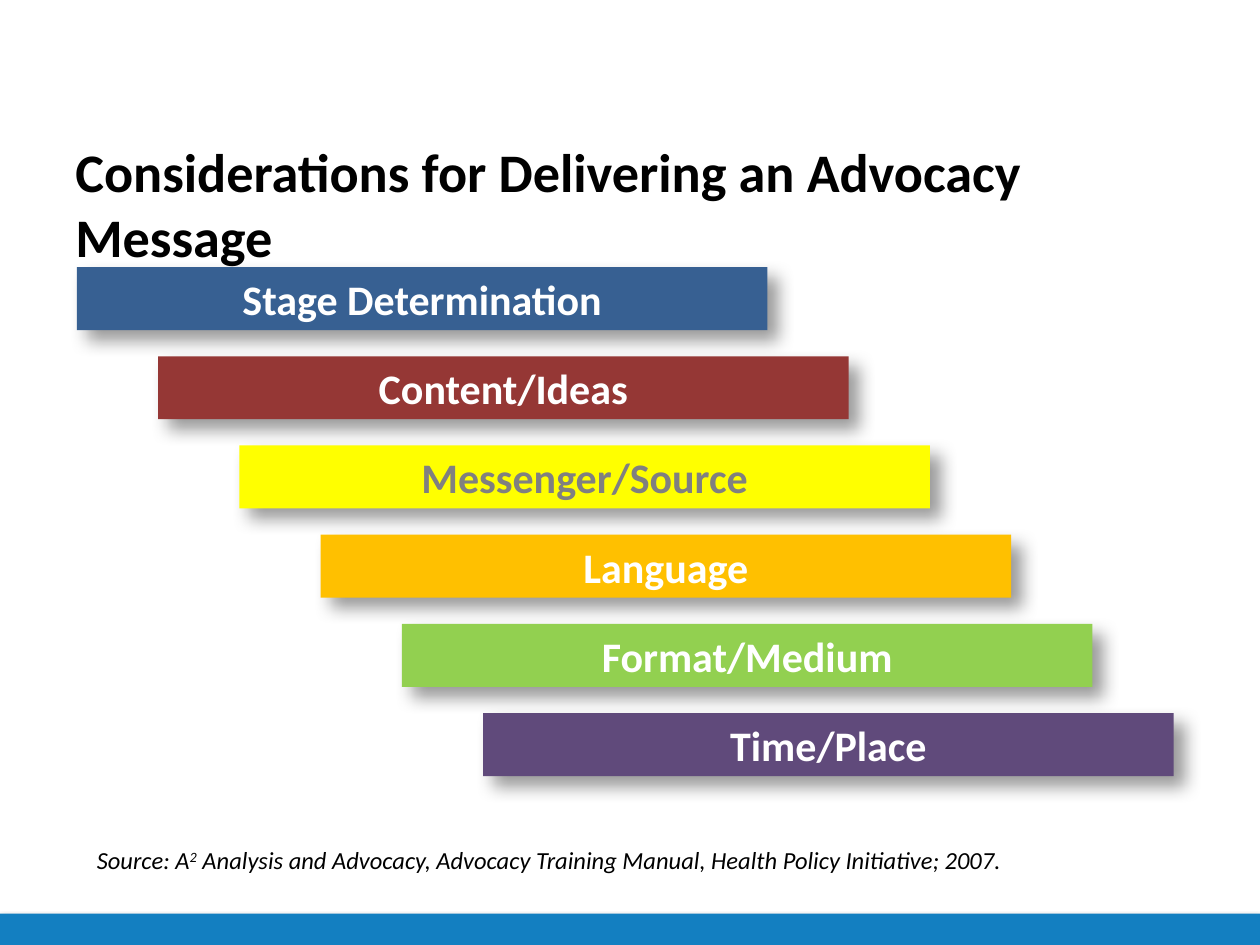
from lxml.etree import SubElement
from pptx import Presentation
from pptx.dml.color import RGBColor
from pptx.enum.shapes import MSO_SHAPE
from pptx.enum.text import MSO_ANCHOR, PP_ALIGN
from pptx.oxml.ns import qn
from pptx.util import Inches, Pt

BLACK = RGBColor(0x00, 0x00, 0x00)
WHITE = RGBColor(0xFF, 0xFF, 0xFF)
GRAY = RGBColor(0x80, 0x80, 0x80)
FOOTER_BLUE = RGBColor(0x13, 0x7F, 0xC1)
NAVY = RGBColor(0x37, 0x60, 0x92)
BRICK = RGBColor(0x95, 0x37, 0x35)
YELLOW = RGBColor(0xFF, 0xFF, 0x00)
AMBER = RGBColor(0xFF, 0xC0, 0x00)
GREEN = RGBColor(0x92, 0xD0, 0x50)
PURPLE = RGBColor(0x60, 0x4A, 0x7B)

TITLE = "Considerations for Delivering an Advocacy Message"
STEPS = [
    ("Stage Determination", NAVY, WHITE),
    ("Content/Ideas", BRICK, WHITE),
    ("Messenger/Source", YELLOW, GRAY),
    ("Language", AMBER, WHITE),
    ("Format/Medium", GREEN, WHITE),
    ("Time/Place", PURPLE, WHITE),
]
# (text, superscript)
SOURCE = [
    ("Source: A", False),
    ("2", True),
    (" Analysis and Advocacy, Advocacy Training Manual, Health Policy Initiative; 2007.", False),
]

WIDTH, HEIGHT = 10, 7.5
FOOTER_HEIGHT = HEIGHT / 30
BAR_WIDTH, BAR_HEIGHT = 5.48, 0.5
FIRST_LEFT, FIRST_TOP = 0.61, 2.12
STEP_RIGHT, STEP_DOWN = 0.645, 0.708

TITLE_FONT = dict(size=Pt(31), bold=True)
BAR_FONT = dict(size=Pt(24), bold=True)
SOURCE_FONT = dict(size=Pt(14), italic=True)
BAR_SHADOW = dict(alpha=40, blur=10, dist=8, angle=45)
FOOTER_SHADOW = dict(alpha=35, blur=3.1, dist=1.8, angle=90)


def add_run(p, text, color, fmt):
    r = p.add_run()
    r.text = text
    r.font.name = "Calibri"
    r.font.color.rgb = color
    for name, value in fmt.items():
        setattr(r.font, name, value)
    return r


def add_shadow(s, alpha, blur, dist, angle):
    """Black outer shadow: alpha in percent, blur and dist in points, angle in degrees."""
    s.shadow.inherit = False
    effects = s._element.spPr.find(qn("a:effectLst"))
    shadow = SubElement(effects, qn("a:outerShdw"), blurRad=str(Pt(blur)), dist=str(Pt(dist)),
                        dir=str(angle * 60000), algn="tl", rotWithShape="0")
    color = SubElement(shadow, qn("a:srgbClr"), val="000000")
    SubElement(color, qn("a:alpha"), val=str(alpha * 1000))


def add_bar(slide, box, fill, shadow):
    s = slide.shapes.add_shape(MSO_SHAPE.RECTANGLE, *map(Inches, box))
    s.fill.solid()
    s.fill.fore_color.rgb = fill
    s.line.fill.background()
    add_shadow(s, **shadow)
    return s


def add_text_box(slide, box):
    """Add a wrapping text box and return its first paragraph."""
    tf = slide.shapes.add_textbox(*map(Inches, box)).text_frame
    tf.word_wrap = True
    tf.vertical_anchor = MSO_ANCHOR.TOP
    return tf.paragraphs[0]


def main():
    prs = Presentation()
    prs.slide_width, prs.slide_height = Inches(WIDTH), Inches(HEIGHT)
    slide = prs.slides.add_slide(prs.slide_layouts[6])

    add_bar(slide, (0, HEIGHT - FOOTER_HEIGHT, WIDTH, FOOTER_HEIGHT), FOOTER_BLUE, FOOTER_SHADOW)
    add_run(add_text_box(slide, (0.5, 1.05, 9, 0.78)), TITLE, BLACK, TITLE_FONT)

    for i, (label, fill, color) in enumerate(STEPS):
        box = (FIRST_LEFT + i * STEP_RIGHT, FIRST_TOP + i * STEP_DOWN, BAR_WIDTH, BAR_HEIGHT)
        s = add_bar(slide, box, fill, BAR_SHADOW)
        s.text_frame.vertical_anchor = MSO_ANCHOR.MIDDLE
        p = s.text_frame.paragraphs[0]
        p.alignment = PP_ALIGN.CENTER
        add_run(p, label, color, BAR_FONT)

    p = add_text_box(slide, (0.67, 6.66, 8.33, 0.34))
    for text, superscript in SOURCE:
        r = add_run(p, text, BLACK, SOURCE_FONT)
        if superscript:
            r._r.get_or_add_rPr().set("baseline", "30000")

    prs.save("out.pptx")


if __name__ == "__main__":
    main()
